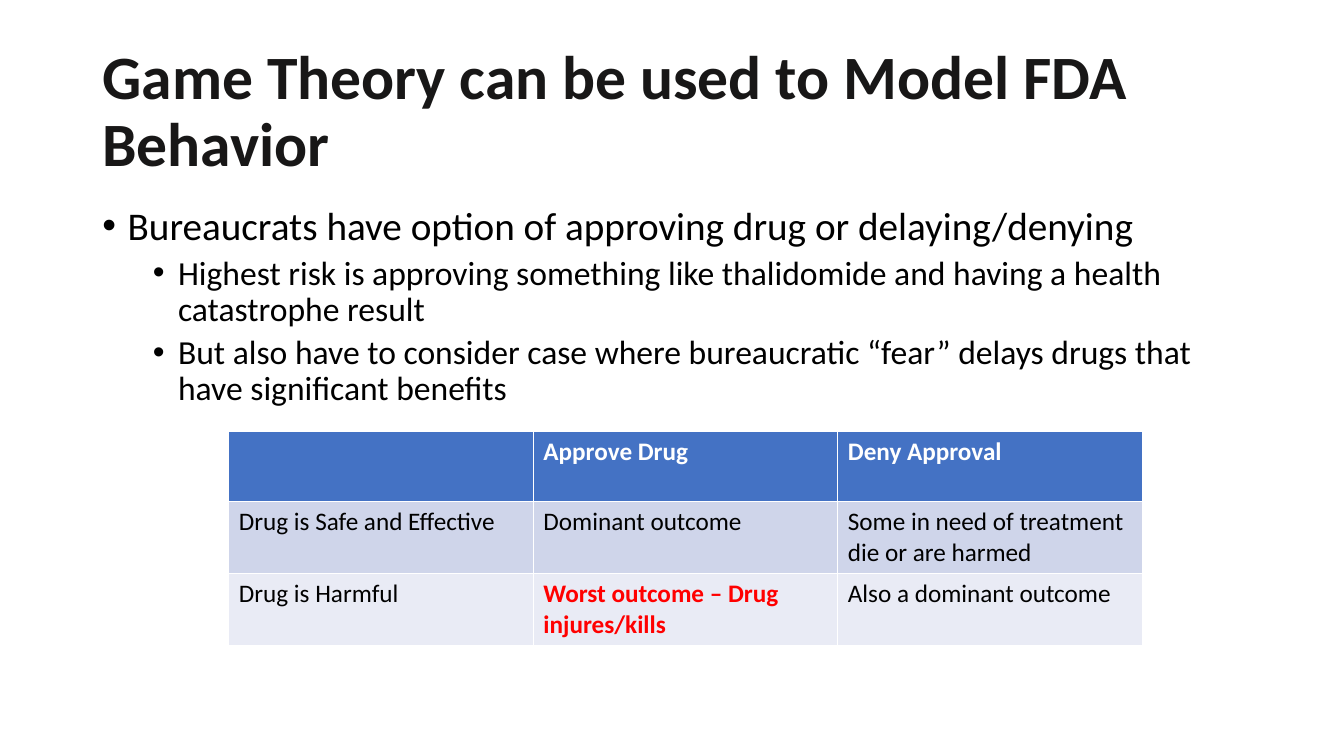
"""Build a slide on game theory as a model of FDA approval decisions."""
from lxml import etree
from pptx import Presentation
from pptx.dml.color import RGBColor
from pptx.enum.text import MSO_ANCHOR, MSO_AUTO_SIZE, PP_ALIGN
from pptx.oxml.ns import qn
from pptx.util import Pt

PX = 9525
LEFT = PP_ALIGN.LEFT
TOP, MIDDLE = MSO_ANCHOR.TOP, MSO_ANCHOR.MIDDLE
NO_FIT = MSO_AUTO_SIZE.NONE

THEME = {
    "font": "Calibri",
    "title": "181717", "text": "000000", "white": "FFFFFF", "alert": "FF0000",
    "rows": ["4472C4", "CFD5EA", "E9EBF5"],
    "title_size": 44, "body_sizes": [28, 24], "table_size": 18,
}


def write(p, text, size, color=THEME["text"], bold=False, spacing=1.0, before=0):
    p.alignment = LEFT
    p.line_spacing = spacing
    p.space_before = Pt(before)
    r = p.add_run()
    r.text = text
    r.font.name = THEME["font"]
    r.font.size = Pt(size)
    r.font.bold = bold
    r.font.color.rgb = RGBColor.from_string(color)


def place(sp, x, y, w, h, anchor):
    sp.left, sp.top, sp.width, sp.height = (v * PX for v in (x, y, w, h))
    tf = sp.text_frame
    tf.word_wrap = True
    tf.auto_size = NO_FIT
    tf.vertical_anchor = anchor
    return tf


prs = Presentation()
prs.slide_width, prs.slide_height = 1280 * PX, 720 * PX
s = prs.slides.add_slide(prs.slide_layouts[1])

tf = place(s.shapes.title, 88, 38, 1104, 139, MIDDLE)
write(tf.paragraphs[0], "Game Theory can be used to Model FDA Behavior",
      THEME["title_size"], color=THEME["title"], bold=True, spacing=0.9)

bullets = [
    (0, "Bureaucrats have option of approving drug or delaying/denying"),
    (1, "Highest risk is approving something like thalidomide and having a health "
        "catastrophe result"),
    (1, "But also have to consider case where bureaucratic “fear” delays drugs that "
        "have significant benefits"),
]
tf = place(s.placeholders[1], 88, 192, 1104, 457, TOP)
for i, (level, text) in enumerate(bullets):
    p = tf.add_paragraph() if i else tf.paragraphs[0]
    p.level = level
    write(p, text, THEME["body_sizes"][level], spacing=0.9, before=10 - 5 * level)
    pPr = p._p.get_or_add_pPr()
    pPr.set("marL", str((24 + 48 * level) * PX))
    pPr.set("indent", str(-24 * PX))
    etree.SubElement(pPr, qn("a:buFont")).set("typeface", "Arial")
    etree.SubElement(pPr, qn("a:buChar")).set("char", "•")

outcomes = [
    ["", "Approve Drug", "Deny Approval"],
    ["Drug is Safe and Effective", "Dominant outcome",
     "Some in need of treatment die or are harmed"],
    ["Drug is Harmful", "Worst outcome – Drug injures/kills", "Also a dominant outcome"],
]
worst = (2, 1)
table = s.shapes.add_table(3, 3, 218 * PX, 411 * PX, 870 * PX, 201 * PX).table
for i, row in enumerate(outcomes):
    for j, text in enumerate(row):
        cell = table.cell(i, j)
        cell.fill.solid()
        cell.fill.fore_color.rgb = RGBColor.from_string(THEME["rows"][i])
        color = "white" if i == 0 else "alert" if (i, j) == worst else "text"
        if text:
            write(cell.text_frame.paragraphs[0], text, THEME["table_size"],
                  color=THEME[color], bold=color != "text")

prs.save("out.pptx")
